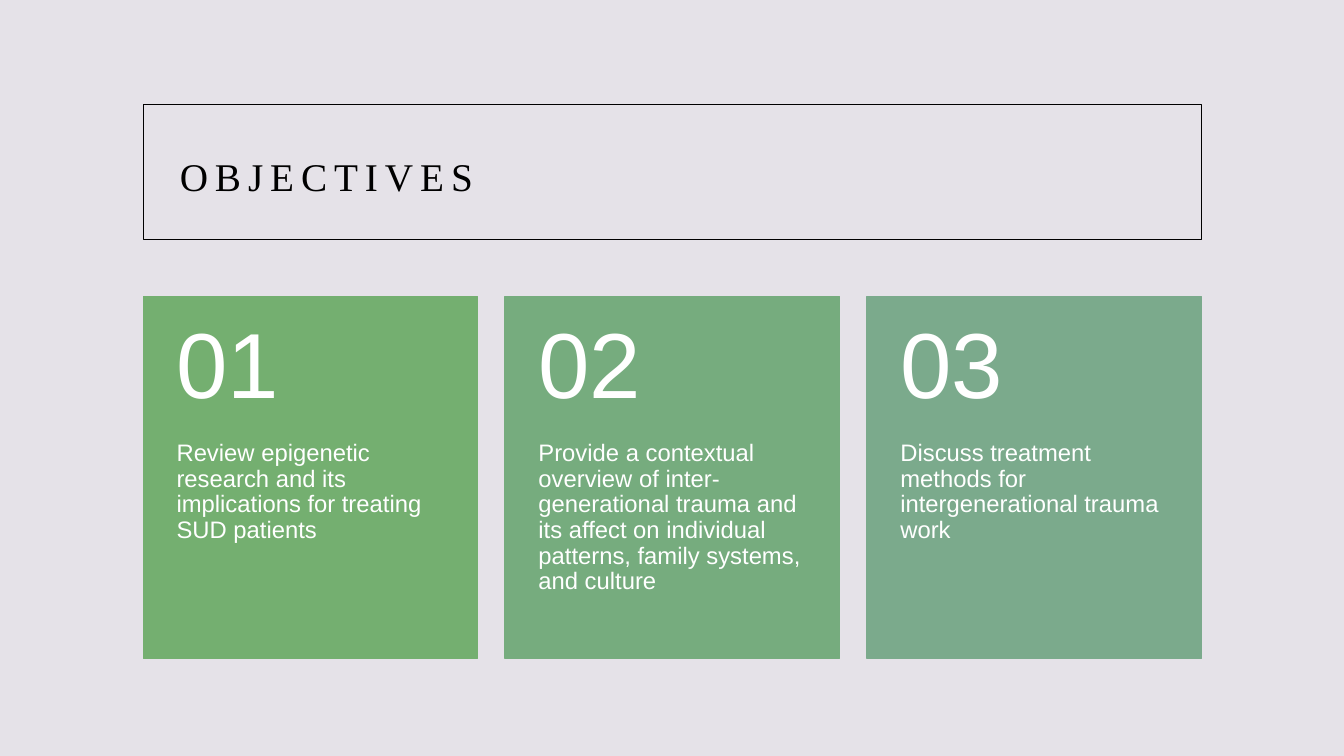
from pptx import Presentation
from pptx import util as u
from pptx.dml.color import RGBColor
from pptx.enum import shapes, text

Cm = u.Cm

# Content
HEADING = "OBJECTIVES"
BACKGROUND = RGBColor(0xE5, 0xE2, 0xE8)
BLACK = RGBColor(0, 0, 0)
WHITE = RGBColor(255, 255, 255)
OBJECTIVES = [
    ("Review epigenetic research and its implications for treating SUD patients",
     RGBColor(0x74, 0xAF, 0x70)),
    ("Provide a contextual overview of inter-generational trauma and its affect "
     "on individual patterns, family systems, and culture",
     RGBColor(0x76, 0xAC, 0x7E)),
    ("Discuss treatment methods for intergenerational trauma work",
     RGBColor(0x7B, 0xAA, 0x8C)),
]

# Layout, in centimetres
LEFT, WIDTH = 3.61, 26.67
BANNER_TOP, BANNER_HEIGHT = 2.64, 3.4
CARD_TOP, CARD_WIDTH, CARD_HEIGHT = 7.47, 8.43, 9.12
NUMBER_HEIGHT = 3.64
PITCH = (WIDTH - CARD_WIDTH) / (len(OBJECTIVES) - 1)

# Text formats
MIDDLE, TOP = text.MSO_ANCHOR.MIDDLE, text.MSO_ANCHOR.TOP
TITLE_FRAME = dict(vertical_anchor=MIDDLE, margin_left=Cm(0.25), margin_right=Cm(0.25),
                   margin_top=Cm(0.13), margin_bottom=Cm(0.13))
NUMBER_FRAME = dict(vertical_anchor=MIDDLE, margin_left=Cm(0.84), margin_right=Cm(0.84),
                    margin_top=Cm(0.46), margin_bottom=Cm(0.46))
GOAL_FRAME = dict(vertical_anchor=TOP, margin_left=Cm(0.84), margin_right=Cm(0.84),
                  margin_top=0, margin_bottom=Cm(0.91))
TITLE_FONT = dict(name="Times New Roman", size=u.Pt(28))
NUMBER_FONT = dict(name="Arial", size=u.Pt(66))
GOAL_FONT = dict(name="Arial", size=u.Pt(17))


def set_all(target, values):
    for name, value in values.items():
        setattr(target, name, value)


def write(frame, words, frame_format, font_format, color, spacing):
    set_all(frame, dict(word_wrap=True, auto_size=text.MSO_AUTO_SIZE.NONE, **frame_format))
    paragraph = frame.paragraphs[0]
    set_all(paragraph, dict(alignment=text.PP_ALIGN.LEFT, line_spacing=spacing))
    run = paragraph.add_run()
    run.text = words
    set_all(run.font, font_format)
    run.font.color.rgb = color
    return run


def add_box(slide, left, top, width, height, line, fill=None):
    box = slide.shapes.add_shape(shapes.MSO_SHAPE.RECTANGLE,
                                 Cm(left), Cm(top), Cm(width), Cm(height))
    box.shadow.inherit = False
    box.line.color.rgb = line
    box.line.width = u.Pt(1)
    if fill is None:
        box.fill.background()
    else:
        box.fill.solid()
        box.fill.fore_color.rgb = fill


def add_label(slide, left, top, height, words, frame_format, font_format):
    label = slide.shapes.add_textbox(Cm(left), Cm(top), Cm(CARD_WIDTH), Cm(height))
    write(label.text_frame, words, frame_format, font_format, WHITE, 0.9)


def main():
    deck = Presentation()
    deck.slide_width, deck.slide_height = Cm(33.87), Cm(19.05)
    slide = deck.slides.add_slide(deck.slide_layouts[5])
    slide.background.fill.solid()
    slide.background.fill.fore_color.rgb = BACKGROUND

    # Framed heading
    add_box(slide, LEFT, BANNER_TOP, WIDTH, BANNER_HEIGHT, BLACK)
    title = slide.shapes.title
    set_all(title, dict(left=Cm(4.28), top=Cm(3.38), width=Cm(25), height=Cm(1.88)))
    heading = write(title.text_frame, HEADING, TITLE_FRAME, TITLE_FONT, BLACK, 1.2)
    heading.font._element.set("spc", "500")  # letter spacing of 5 pt

    # Numbered cards
    for index, (goal, color) in enumerate(OBJECTIVES):
        left = LEFT + index * PITCH
        add_box(slide, left, CARD_TOP, CARD_WIDTH, CARD_HEIGHT, color, color)
        add_label(slide, left, CARD_TOP + NUMBER_HEIGHT, CARD_HEIGHT - NUMBER_HEIGHT,
                  goal, GOAL_FRAME, GOAL_FONT)
        add_label(slide, left, CARD_TOP, NUMBER_HEIGHT,
                  f"{index + 1:02}", NUMBER_FRAME, NUMBER_FONT)

    deck.save("out.pptx")


if __name__ == "__main__":
    main()
